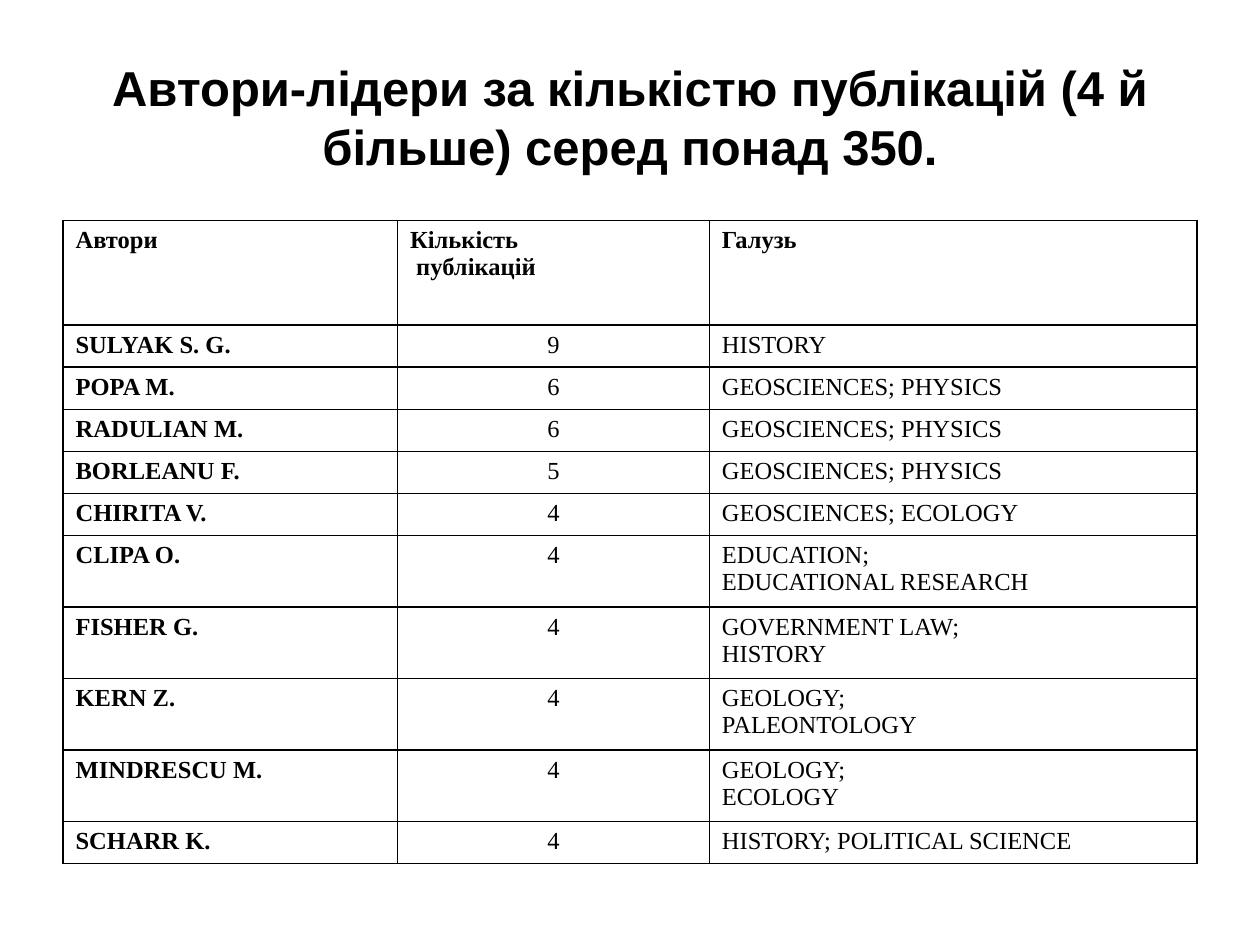
import lxml.etree
import pptx
import pptx.dml.color
import pptx.enum.text
import pptx.oxml.ns
import pptx.util

Pt = pptx.util.Pt
ALIGN = pptx.enum.text.PP_ALIGN
ANCHOR = pptx.enum.text.MSO_ANCHOR
qn = pptx.oxml.ns.qn

COLORS = {"text": "000000", "border": "000000"}
TITLE = "Автори-лідери за кількістю публікацій (4 й більше) серед понад 350."
HEADERS = ["Автори", "Кількість\n публікацій", "Галузь"]
AUTHORS = [
    ("SULYAK S. G.", 9, "HISTORY"),
    ("POPA M.", 6, "GEOSCIENCES; PHYSICS"),
    ("RADULIAN M.", 6, "GEOSCIENCES; PHYSICS"),
    ("BORLEANU F.", 5, "GEOSCIENCES; PHYSICS"),
    ("CHIRITA V.", 4, "GEOSCIENCES; ECOLOGY"),
    ("CLIPA O.", 4, "EDUCATION;\nEDUCATIONAL RESEARCH"),
    ("FISHER G.", 4, "GOVERNMENT LAW;\nHISTORY"),
    ("KERN Z.", 4, "GEOLOGY;\nPALEONTOLOGY"),
    ("MINDRESCU M.", 4, "GEOLOGY;\nECOLOGY"),
    ("SCHARR K.", 4, "HISTORY; POLITICAL SCIENCE"),
]
COLUMN_SHARES = [0.295, 0.275, 0.43]
HEADER_HEIGHT = 59.8
ROW_HEIGHTS = {1: 23.4, 2: 38.9}  # by number of text lines


def write_text(frame, text, font="Times New Roman", size=14, bold=False,
               align=ALIGN.JUSTIFY, hanging=0):
    """Write one paragraph for each line of the text."""
    frame.word_wrap = True
    for number, line in enumerate(text.split("\n")):
        paragraph = frame.add_paragraph() if number else frame.paragraphs[0]
        paragraph.alignment = align
        if hanging:
            properties = paragraph._p.get_or_add_pPr()
            properties.set("marL", str(Pt(hanging)))
            properties.set("indent", str(-Pt(hanging)))
        run = paragraph.add_run()
        run.text = line
        run.font.name = font
        run.font.size = Pt(size)
        run.font.bold = bold
        run.font.color.rgb = pptx.dml.color.RGBColor.from_string(COLORS["text"])


def add_title(slide, left, top, width, height):
    frame = slide.shapes.add_textbox(Pt(left), Pt(top), Pt(width), Pt(height)).text_frame
    frame.vertical_anchor = ANCHOR.MIDDLE
    write_text(frame, TITLE, font="Arial", size=28, bold=True, align=ALIGN.CENTER)


def add_borders(cell, width=1):
    properties = cell._tc.get_or_add_tcPr()
    for side in ("lnL", "lnR", "lnT", "lnB"):
        line = lxml.etree.SubElement(properties, qn(f"a:{side}"), w=str(Pt(width)))
        fill = lxml.etree.SubElement(line, qn("a:solidFill"))
        lxml.etree.SubElement(fill, qn("a:srgbClr"), val=COLORS["border"])


def add_author_table(slide, left, top, width):
    heights = [HEADER_HEIGHT] + [
        ROW_HEIGHTS[field.count("\n") + 1] for _, _, field in AUTHORS]
    table = slide.shapes.add_table(
        len(heights), len(HEADERS), Pt(left), Pt(top), Pt(width), Pt(sum(heights))).table
    table.first_row = table.horz_banding = False
    for column, share in zip(table.columns, COLUMN_SHARES):
        column.width = Pt(width * share)
    for row, height in zip(table.rows, heights):
        row.height = Pt(height)

    for r, values in enumerate([HEADERS] + AUTHORS):
        for c, value in enumerate(values):
            cell = table.cell(r, c)
            add_borders(cell)
            cell.fill.background()
            if r and c == 1:
                align = ALIGN.CENTER
            elif r == 0 and c == 2:
                align = ALIGN.LEFT
            else:
                align = ALIGN.JUSTIFY
            write_text(cell.text_frame, str(value), bold=r == 0 or c == 0,
                       align=align, hanging=27)


def main():
    deck = pptx.Presentation()
    deck.slide_width, deck.slide_height = Pt(720), Pt(540)
    slide = deck.slides.add_slide(deck.slide_layouts[6])
    add_title(slide, 36, 21.6, 648, 90)
    add_author_table(slide, 36, 126, 648)
    deck.save("out.pptx")


if __name__ == "__main__":
    main()
